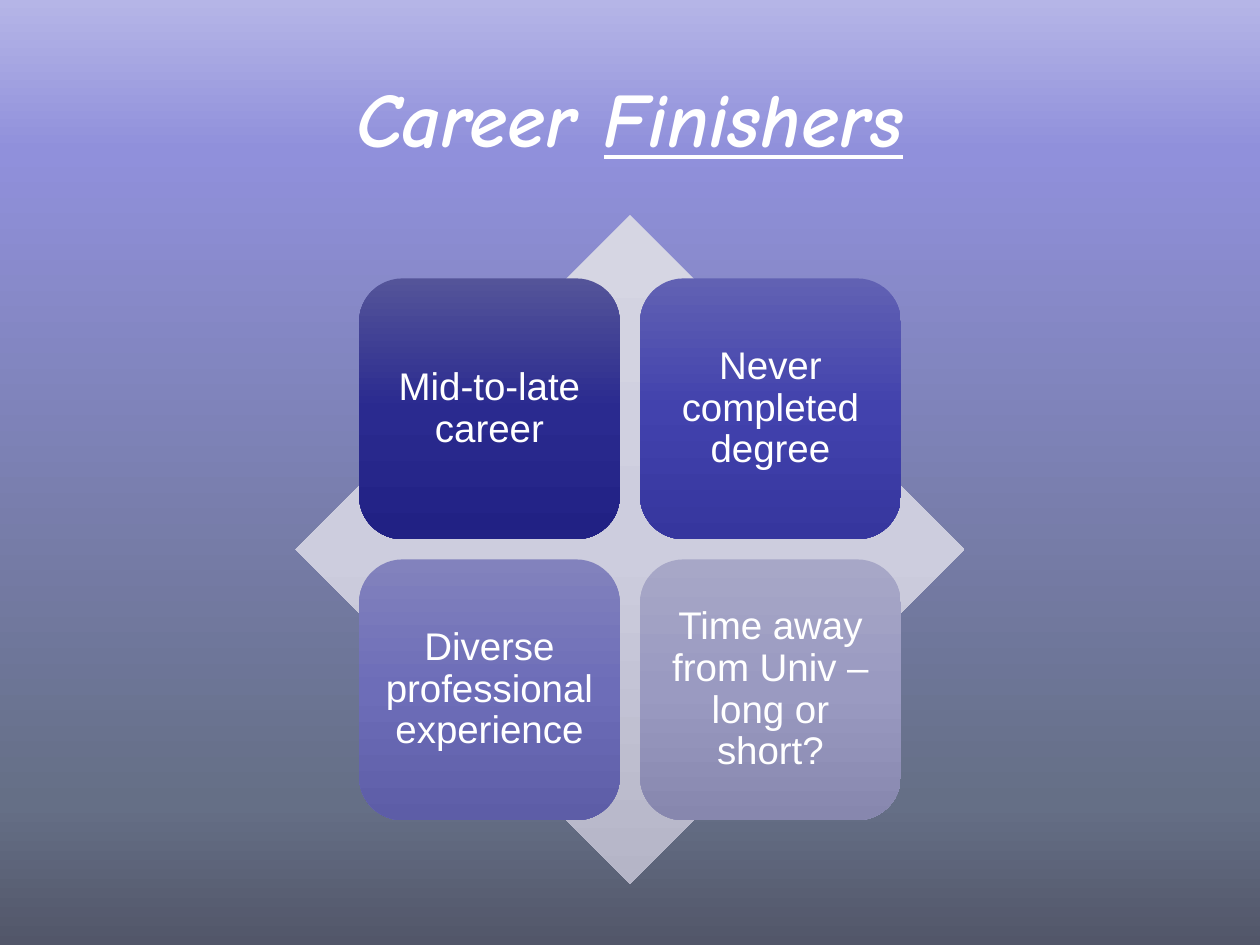
from dataclasses import dataclass

from pptx import Presentation
from pptx.dml.color import RGBColor
from pptx.enum.shapes import MSO_SHAPE
from pptx.enum.text import MSO_ANCHOR, PP_ALIGN
from pptx.oxml import parse_xml
from pptx.oxml.ns import nsdecls, qn
from pptx.util import Inches, Pt

WIDE, HIGH = 10, 7.5
MID_X, MID_Y = WIDE / 2, 4.36
SPAN = 5.31  # diamond
TILE, STEP = 2.07, 2.23


@dataclass
class Tile:
    text: str
    col: int
    row: int
    shades: tuple[str, str, str]


TILES = [
    Tile("Mid-to-late career", 0, 0, ("545499", "2A2A8F", "212184")),
    Tile("Never completed degree", 1, 0, ("6161B3", "4242AD", "36369E")),
    Tile("Diverse professional experience", 0, 1, ("8282BD", "6D6DB8", "5D5DA7")),
    Tile("Time away from Univ – long or short?", 1, 1, ("A7A7C7", "9A9AC1", "8787AE")),
]


def color(code: str) -> RGBColor:
    return RGBColor.from_string(code)


def blend(fill, root, stops, angle: int) -> None:
    """Give fill, found under root, a gradient; angle runs counter-clockwise."""
    fill.gradient()
    fill.gradient_angle = angle
    slots = root.find(".//" + qn("a:gsLst"))
    for old in list(slots):
        slots.remove(old)
    for place, code in stops:
        slots.append(parse_xml(
            f'<a:gs {nsdecls("a")} pos="{place * 1000}"><a:srgbClr val="{code}"/></a:gs>'))


def write(para, text: str, font="Arial", size=22, code="FFFFFF",
          bold=False, slant=False, under=False) -> None:
    run = para.add_run()
    run.text = text
    face = run.font
    face.name, face.size, face.color.rgb = font, Pt(size), color(code)
    face.bold, face.italic, face.underline = bold, slant, under


def block(slide, kind, x: float, y: float, size: float, shades):
    """Draw a square shape centred on x, y."""
    shape = slide.shapes.add_shape(
        kind, Inches(x - size / 2), Inches(y - size / 2), Inches(size), Inches(size))
    shape.shadow.inherit = False
    shape.line.fill.background()
    blend(shape.fill, shape.element, zip((0, 50, 100), shades), 270)
    return shape


def draw(slide, tile: Tile) -> None:
    shape = block(slide, MSO_SHAPE.ROUNDED_RECTANGLE,
                  MID_X + (tile.col - 0.5) * STEP,
                  MID_Y + (tile.row - 0.5) * STEP, TILE, tile.shades)
    frame = shape.text_frame
    frame.word_wrap = True
    frame.vertical_anchor = MSO_ANCHOR.MIDDLE
    frame.margin_left = frame.margin_right = Inches(0.09)
    frame.margin_top = frame.margin_bottom = Inches(0.09)
    para = frame.paragraphs[0]
    para.alignment, para.line_spacing = PP_ALIGN.CENTER, 0.9
    write(para, tile.text)


def head(slide) -> None:
    title = slide.shapes.title
    title.left, title.top = Inches(0.05 * WIDE), Inches(0.04 * HIGH)
    title.width, title.height = Inches(0.9 * WIDE), Inches(HIGH / 6)
    title.text_frame.vertical_anchor = MSO_ANCHOR.MIDDLE
    para = title.text_frame.paragraphs[0]
    para.alignment = PP_ALIGN.CENTER
    for text, under in (("Career ", False), ("Finishers", True)):
        write(para, text, font="Comic Neue", size=44, bold=True, slant=True, under=under)


def main() -> None:
    deck = Presentation()
    deck.slide_width, deck.slide_height = Inches(WIDE), Inches(HIGH)
    slide = deck.slides.add_slide(deck.slide_layouts[5])
    blend(slide.background.fill, slide.element,
          [(0, "525669"), (15, "656F86"), (84, "9090DB"), (100, "B5B5E7")], 90)
    head(slide)
    block(slide, MSO_SHAPE.DIAMOND, MID_X, MID_Y, SPAN, ("D6D6E3", "CDCDDE", "B5B5C7"))
    for tile in TILES:
        draw(slide, tile)
    deck.save("out.pptx")


if __name__ == "__main__":
    main()
